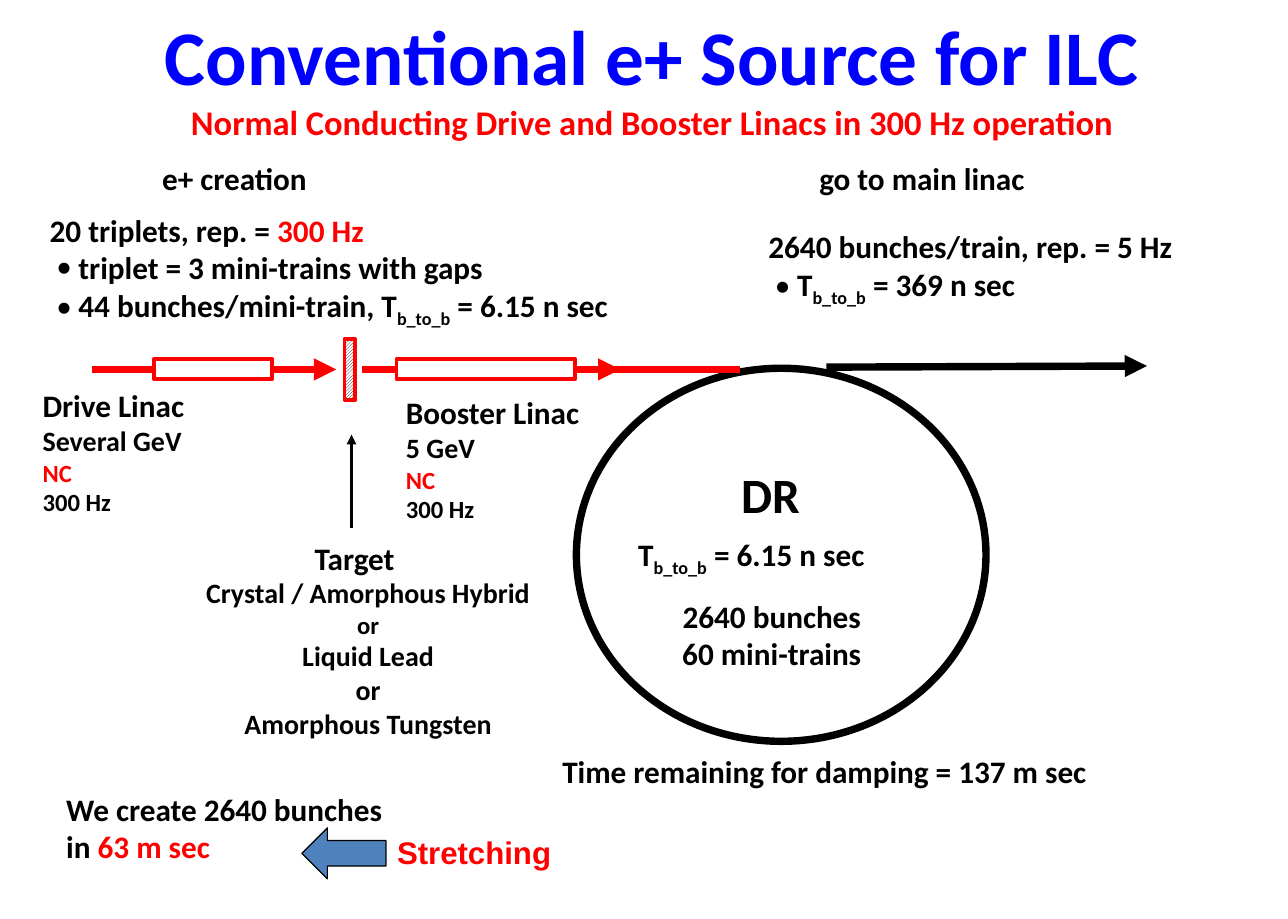
import collections
import pptx
import pptx.dml.color
import pptx.enum.dml
import pptx.enum.shapes
import pptx.enum.text
import pptx.oxml.ns
import pptx.util
from lxml import etree

Pt = pptx.util.Pt
RGBColor = pptx.dml.color.RGBColor
qn = pptx.oxml.ns.qn
SHAPE = pptx.enum.shapes.MSO_SHAPE
ALIGN = pptx.enum.text.PP_ALIGN

BLACK = RGBColor(0x00, 0x00, 0x00)
WHITE = RGBColor(0xFF, 0xFF, 0xFF)
RED = RGBColor(0xFF, 0x00, 0x00)
TITLE_BLUE = RGBColor(0x00, 0x00, 0xFF)
ARROW_BLUE = RGBColor(0x4F, 0x81, 0xBD)

BODY, DETAIL, SMALL = 19, 17, 15
BEAM_WIDTH = 4.5
ROW = 31
TWO_ROWS = 54

Box = collections.namedtuple("Box", "left top width height")
Run = collections.namedtuple(
    "Run", "text size color subscript font", defaults=(BODY, BLACK, False, "Calibri"))
Line = collections.namedtuple("Line", "runs bullet", defaults=(False,))


def line(text, size=BODY, color=BLACK, font="Calibri"):
    return Line([Run(text, size, color, font=font)])


def spacing_line(before, after, bullet=False):
    """A line that names the bunch-to-bunch time T."""
    return Line([Run(before), Run("b_to_b", subscript=True), Run(after)], bullet)


def place(shape, box):
    shape.left, shape.top, shape.width, shape.height = (Pt(v) for v in box)


def add_bullet(paragraph):
    properties = paragraph._p.get_or_add_pPr()
    properties.set("marL", str(Pt(17.5)))
    properties.set("indent", str(-Pt(13.5)))
    etree.SubElement(properties, qn("a:buFont")).set("typeface", "Calibri")
    etree.SubElement(properties, qn("a:buChar")).set("char", "•")


def write_lines(frame, lines, align):
    frame.word_wrap = True
    frame.auto_size = pptx.enum.text.MSO_AUTO_SIZE.NONE
    frame.vertical_anchor = pptx.enum.text.MSO_ANCHOR.TOP
    frame.margin_left = frame.margin_right = Pt(7.9)
    frame.margin_top = frame.margin_bottom = Pt(3.8)
    for index, item in enumerate(lines):
        paragraph = frame.add_paragraph() if index else frame.paragraphs[0]
        paragraph.alignment = align
        if item.bullet:
            add_bullet(paragraph)
        for part in item.runs:
            run = paragraph.add_run()
            run.text = part.text
            run.font.size = Pt(part.size)
            run.font.bold = True
            run.font.name = part.font
            run.font.color.rgb = part.color
            if part.subscript:
                run._r.get_or_add_rPr().set("baseline", "-25000")


def add_label(slide, box, lines, align=ALIGN.LEFT):
    label = slide.shapes.add_textbox(*(Pt(v) for v in box))
    write_lines(label.text_frame, lines, align)


def add_outlined(slide, kind, box, line_color, line_width, fill=None):
    shape = slide.shapes.add_shape(kind, *(Pt(v) for v in box))
    shape.shadow.inherit = False
    shape.line.color.rgb = line_color
    shape.line.width = Pt(line_width)
    if fill is None:
        shape.fill.background()
    else:
        shape.fill.solid()
        shape.fill.fore_color.rgb = fill
    return shape


def add_beam(slide, start, end, color, width=BEAM_WIDTH, arrow=True):
    beam = slide.shapes.add_connector(
        pptx.enum.shapes.MSO_CONNECTOR.STRAIGHT, *(Pt(v) for v in start + end))
    beam.line.color.rgb = color
    beam.line.width = Pt(width)
    if arrow:
        etree.SubElement(beam.line._get_or_add_ln(), qn("a:tailEnd")).set("type", "triangle")
    etree.SubElement(beam._element.spPr, qn("a:effectLst"))


def header(slide, box):
    title = slide.shapes.title
    place(title, box)
    write_lines(title.text_frame, [
        line("Conventional e+ Source for ILC", 47, TITLE_BLUE),
        line("Normal Conducting Drive and Booster Linacs in 300 Hz operation", 21, RED),
    ], ALIGN.CENTER)


def damping_ring(slide, box):
    left, top, width, height = box
    add_outlined(slide, SHAPE.OVAL, box, BLACK, BEAM_WIDTH)
    add_beam(slide, (left + 152, top - 0.7), (left + 347, top - 1.4), BLACK)
    add_label(slide, Box(left + 92.2, top + 54.7, 84, 44), [line("DR", 30)])
    add_label(slide, Box(left + 29.6, top + 97.9, 206, ROW),
              [spacing_line("T", " = 6.15 n sec")])
    add_label(slide, Box(left + 36, top + 135.4, 165.6, TWO_ROWS),
              [line("2640 bunches"), line("60 mini-trains")], ALIGN.CENTER)
    add_label(slide, Box(left - 16.5, top + height + 2.9, 443, ROW),
              [line("Time remaining for damping = 137 m sec")])


def creation_notes(slide, box):
    left, top, width, height = box
    add_label(slide, Box(left + 68.4, top, 215, ROW), [line("e+ creation")])
    add_label(slide, Box(left, top + 31.7, width, height - 31.7), [
        Line([Run("20 triplets, rep. = "), Run("300 Hz", color=RED)]),
        Line([Run("triplet = 3 mini-trains with gaps")], True),
        spacing_line("44 bunches/mini-train, T", " = 6.15 n sec", True),
    ])


def main_linac_notes(slide, box):
    left, top, width, height = box
    add_label(slide, Box(left + 31, top, 277, ROW), [line("go to main linac")])
    add_label(slide, Box(left, top + 41.7, width, height - 41.7), [
        line("2640 bunches/train, rep. = 5 Hz"),
        spacing_line("T", " = 369 n sec", True),
    ])


def linac(slide, beam, cavity, label, name, energy):
    """Draw an accelerating cavity on its beam; cavity and label are boxes relative to the beam start."""
    left, y, length, _ = beam
    add_beam(slide, (left, y), (left + length, y), RED)
    add_outlined(slide, SHAPE.RECTANGLE,
                 Box(left + cavity.left, y + cavity.top, cavity.width, cavity.height),
                 RED, 2.25, WHITE)
    add_label(slide, Box(left + label.left, y + label.top, label.width, label.height), [
        line(name), line(energy, DETAIL), line("NC", SMALL, RED), line("300 Hz", SMALL)])


def target(slide, box):
    left, top, width, height = box
    plate = add_outlined(slide, SHAPE.RECTANGLE, box, RED, 2.25)
    plate.fill.patterned()
    plate.fill.pattern = pptx.enum.dml.MSO_PATTERN.LIGHT_UPWARD_DIAGONAL
    plate.fill.fore_color.rgb = BLACK
    plate.fill.back_color.rgb = WHITE
    middle = left + 4.3
    add_beam(slide, (middle, top + 115.2), (middle, top + 58.3), BLACK, 1.5)
    add_label(slide, Box(left - 26, top + 118.1, 86, ROW), [line("Target")])
    add_label(slide, Box(left - 170.6, top + 140.4, 370, 108), [
        line("Crystal / Amorphous Hybrid", DETAIL), line("or", SMALL),
        line("Liquid Lead", DETAIL), line("or", DETAIL),
        line("Amorphous Tungsten", DETAIL)], ALIGN.CENTER)


def beamline(slide, box):
    left, y, length, _ = box
    add_beam(slide, (left + 306.7, y), (left + length, y), RED, arrow=False)
    linac(slide, Box(left, y, 148.3, 0), Box(37.4, -6.4, 72, 12.4),
          Box(-38.2, 6.5, 200, 88), "Drive Linac", "Several GeV")
    linac(slide, Box(left + 164.1, y, 157, 0), Box(20.9, -6.4, 108.7, 12.4),
          Box(18.7, 10.8, 157, 88), "Booster Linac", "5 GeV")
    target(slide, Box(left + 153.3, y - 18.7, 6.6, 37.4))


def stretching_summary(slide, box):
    left, top, width, height = box
    add_label(slide, Box(left, top, width, TWO_ROWS), [
        line("We create 2640 bunches"),
        Line([Run("in "), Run("63 m sec", color=RED)])])
    add_label(slide, Box(left + 201.2, top + 26, 241, ROW),
              [line("Stretching", color=RED, font="Arial")])
    add_outlined(slide, SHAPE.LEFT_ARROW, Box(left + 151.2, top + 26.7, 51.1, ROW),
                 BLACK, 0.75, ARROW_BLUE)


def main():
    deck = pptx.Presentation()
    deck.slide_width, deck.slide_height = Pt(783.36), Pt(558.72)
    slide = deck.slides.add_slide(deck.slide_layouts[5])
    header(slide, Box(48.2, 1.4, 697, 90))
    damping_ring(slide, Box(350.6, 223.9, 249.1, 226.8))
    creation_notes(slide, Box(22.3, 92.9, 435.6, 108.7))
    main_linac_notes(slide, Box(459.4, 92.9, 314, 95.7))
    beamline(slide, Box(56.2, 224.6, 393.8, 0))
    stretching_summary(slide, Box(32.4, 476.6, 255, TWO_ROWS))
    deck.save("out.pptx")


if __name__ == "__main__":
    main()
